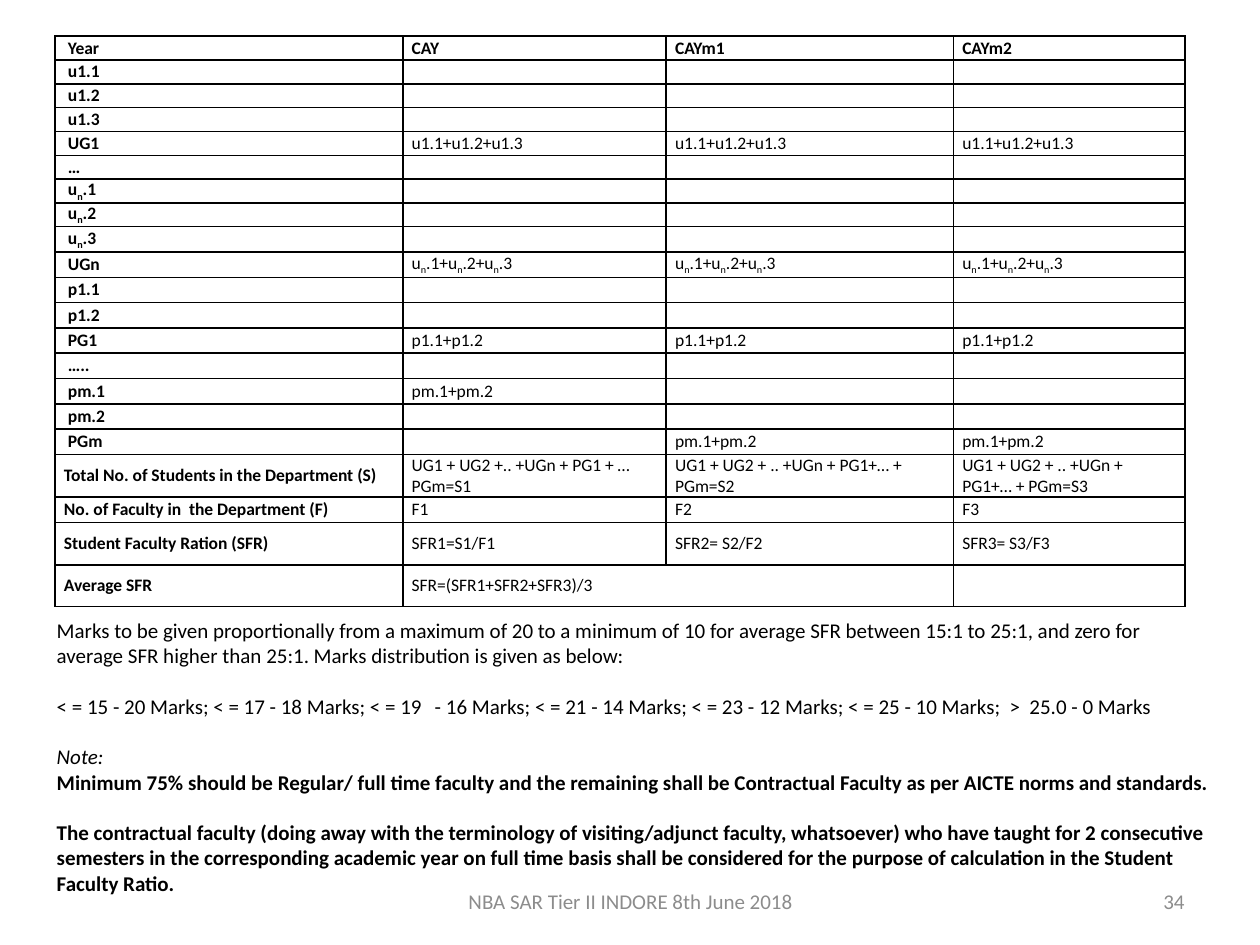
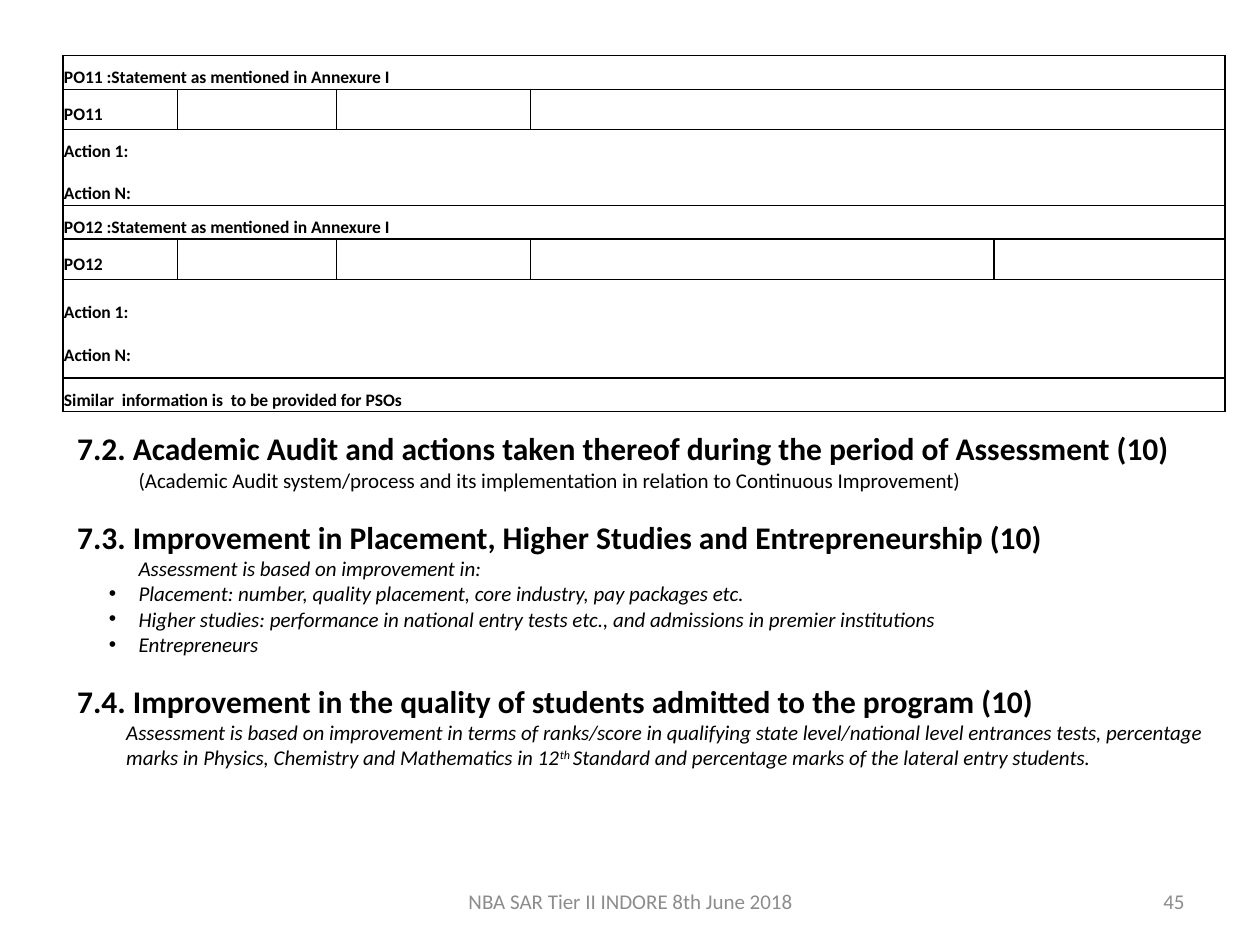
from dataclasses import dataclass

from lxml import etree
from pptx import Presentation
from pptx.dml.color import RGBColor
from pptx.enum.text import MSO_ANCHOR, MSO_AUTO_SIZE, PP_ALIGN
from pptx.oxml.ns import qn
from pptx.util import Cm, Pt

MIDDLE, TOP = MSO_ANCHOR.MIDDLE, MSO_ANCHOR.TOP
LEFT, CENTER, RIGHT = PP_ALIGN.LEFT, PP_ALIGN.CENTER, PP_ALIGN.RIGHT
NO_AUTOFIT = MSO_AUTO_SIZE.NONE

FONT = "Calibri"
BLACK, GREY = "000000", "8C8C8C"
TABLE_SIZE, BODY_SIZE, HEADING_SIZE = 10, 12, 18
SUBSCRIPT, SUPERSCRIPT = -25, 30
BLANK_LINE = 14.5
TITLE_AND_CONTENT = 1
FOOTER = "NBA SAR Tier II INDORE 8th June 2018"


@dataclass
class Box:
    left: float
    top: float
    width: float
    height: float


@dataclass
class Line:
    """One paragraph; text between two ~ marks is raised or lowered by shift percent."""
    text: str
    size: float = BODY_SIZE
    bold: bool = False
    italic: bool = False
    color: str = BLACK
    align: PP_ALIGN = LEFT
    indent: float = 0
    hanging: float = 0
    bullet: str = ""
    before: float = 0
    spacing: float = 1.0
    shift: int = SUBSCRIPT


@dataclass
class Grid:
    left: float
    top: float
    columns: list[float]
    rows: list[float]
    cells: list[list[list[Line]]]
    spans: list[tuple[int, int, int]]
    side_margin: float
    edge_margin: float


def rgb(color: str) -> RGBColor:
    return RGBColor.from_string(color)


def write_line(paragraph, line: Line) -> None:
    paragraph.alignment = line.align
    paragraph.line_spacing = line.spacing
    paragraph.space_before = Pt(line.before)
    properties = paragraph._p.get_or_add_pPr()
    properties.set("marL", str(Cm(line.indent)))
    properties.set("indent", str(-Cm(line.hanging)))
    if line.bullet:
        etree.SubElement(properties, qn("a:buChar"), char=line.bullet)
    else:
        etree.SubElement(properties, qn("a:buNone"))
    for index, text in enumerate(line.text.split("~")):
        run = paragraph.add_run()
        run.text = text
        font = run.font
        font.name, font.size = FONT, Pt(line.size)
        font.bold, font.italic = line.bold, line.italic
        font.color.rgb = rgb(line.color)
        if index % 2:
            run._r.get_or_add_rPr().set("baseline", str(line.shift * 1000))


def write_lines(text_frame, lines: list[Line]) -> None:
    for index, line in enumerate(lines):
        paragraph = text_frame.add_paragraph() if index else text_frame.paragraphs[0]
        write_line(paragraph, line)


def border_cell(cell) -> None:
    properties = cell._tc.get_or_add_tcPr()
    for side in ("a:lnL", "a:lnR", "a:lnT", "a:lnB"):
        border = etree.SubElement(properties, qn(side), w=str(Pt(1)))
        fill = etree.SubElement(border, qn("a:solidFill"))
        etree.SubElement(fill, qn("a:srgbClr"), val=BLACK)


def add_grid(slide, grid: Grid) -> None:
    frame = slide.shapes.add_table(
        len(grid.rows), len(grid.columns), Cm(grid.left), Cm(grid.top),
        Cm(sum(grid.columns)), Cm(sum(grid.rows)))
    table = frame.table
    table.first_row = table.horz_banding = False
    for column, width in zip(table.columns, grid.columns):
        column.width = Cm(width)
    for row, height in zip(table.rows, grid.rows):
        row.height = Cm(height)
    for cell in table.iter_cells():
        border_cell(cell)
        cell.fill.background()
        cell.vertical_anchor = MIDDLE
        cell.margin_left = cell.margin_right = Cm(grid.side_margin)
        cell.margin_top = cell.margin_bottom = Cm(grid.edge_margin)
    for row, first, last in grid.spans:
        table.cell(row, first).merge(table.cell(row, last))
    for row, contents in enumerate(grid.cells):
        for column in range(len(grid.columns)):
            text_frame = table.cell(row, column).text_frame
            if column < len(contents) and contents[column]:
                write_lines(text_frame, contents[column])
            else:
                etree.SubElement(text_frame.paragraphs[0]._p, qn("a:endParaRPr"),
                                 sz=str(TABLE_SIZE * 100))


def place(shape, box: Box) -> None:
    shape.left, shape.top = Cm(box.left), Cm(box.top)
    shape.width, shape.height = Cm(box.width), Cm(box.height)


def add_footer_text(slide, box: Box, text: str, align: PP_ALIGN) -> None:
    shape = slide.shapes.add_textbox(
        Cm(box.left), Cm(box.top), Cm(box.width), Cm(box.height))
    shape.text_frame.word_wrap = True
    shape.text_frame.vertical_anchor = MIDDLE
    write_lines(shape.text_frame, [Line(text, color=GREY, align=align)])


def add_slide(presentation, grid: Grid, body_box: Box, body: list[Line], number: int) -> None:
    slide = presentation.slides.add_slide(presentation.slide_layouts[TITLE_AND_CONTENT])
    title = slide.shapes.title
    title._element.getparent().remove(title._element)
    add_grid(slide, grid)
    placeholder = slide.placeholders[1]
    place(placeholder, body_box)
    text_frame = placeholder.text_frame
    text_frame.word_wrap = True
    text_frame.auto_size = NO_AUTOFIT
    text_frame.vertical_anchor = TOP
    write_lines(text_frame, body)
    add_footer_text(slide, Box(8.69, 17.65, 8.05, 1.02), FOOTER, CENTER)
    add_footer_text(slide, Box(18.21, 17.65, 5.92, 1.02), str(number), RIGHT)


def faculty_ratio_grid() -> Grid:
    texts = [
        ["Year", "CAY", "CAYm1", "CAYm2"],
        ["u1.1"],
        ["u1.2"],
        ["u1.3"],
        ["UG1"] + ["u1.1+u1.2+u1.3"] * 3,
        ["…"],
        ["u~n~.1"],
        ["u~n~.2"],
        ["u~n~.3"],
        ["UGn"] + ["u~n~.1+u~n~.2+u~n~.3"] * 3,
        ["p1.1"],
        ["p1.2"],
        ["PG1"] + ["p1.1+p1.2"] * 3,
        ["….."],
        ["pm.1", "pm.1+pm.2"],
        ["pm.2"],
        ["PGm", "", "pm.1+pm.2", "pm.1+pm.2"],
        ["Total No. of Students in the Department (S)",
         "UG1 + UG2 +.. +UGn + PG1 + …PGm=S1",
         "UG1 + UG2 + .. +UGn + PG1+… + PGm=S2",
         "UG1 + UG2 + .. +UGn + PG1+… + PGm=S3"],
        ["No. of Faculty in  the Department (F)", "F1", "F2", "F3"],
        ["Student Faculty Ration (SFR)", "SFR1=S1/F1", "SFR2= S2/F2", "SFR3= S3/F3"],
        ["Average SFR", "SFR=(SFR1+SFR2+SFR3)/3"],
    ]
    first_summary_row, last_row = 17, 20
    cells = [
        [[Line(text, TABLE_SIZE, bold=row == 0 or column == 0,
               indent=0.08 if column == 0 and row < first_summary_row else 0)]
         if text else []
         for column, text in enumerate(row_texts)]
        for row, row_texts in enumerate(texts)]
    return Grid(1.11, 0.73, [7.01, 5.31, 5.79, 4.67],
                [0.48] * 8 + [0.51] * 9 + [0.86, 0.51, 0.86, 0.84],
                cells, [(last_row, 1, 2)], 0.18, 0)


def outcome_grid() -> Grid:
    def cell(*texts: str) -> list[Line]:
        return [Line(text, TABLE_SIZE, bold=True, before=6, spacing=1.5) for text in texts]

    cells = []
    for outcome in ("PO11", "PO12"):
        cells += [[cell(f"{outcome} :Statement as mentioned in Annexure I")],
                  [cell(outcome)],
                  [cell("Action 1:", "Action N:")]]
    cells.append([cell("Similar  information is  to be provided for PSOs")])
    full_rows = [(row, 0, 4) for row in (0, 2, 3, 5, 6)]
    return Grid(1.27, 1.12, [2.31, 3.2, 3.91, 9.35, 4.65],
                [0.68, 0.81, 1.53, 0.68, 0.81, 1.99, 0.68],
                cells, full_rows + [(1, 3, 4)], 0.02, 0.01)


def heading(text: str, before: float = BLANK_LINE) -> Line:
    return Line(text, HEADING_SIZE, bold=True, before=before)


def bullet(text: str) -> Line:
    return Line(text, italic=True, indent=1.24, hanging=0.6, bullet="•")


MARKS_TEXT = [
    Line("Marks to be given proportionally from a maximum of 20 to a minimum of 10 for "
         "average SFR between 15:1 to 25:1, and zero for average SFR higher than 25:1. "
         "Marks distribution is given as below:"),
    Line("< = 15 - 20 Marks; < = 17 - 18 Marks; < = 19\t- 16 Marks; < = 21 - 14 Marks; "
         "< = 23 - 12 Marks; < = 25 - 10 Marks;  >  25.0 - 0 Marks", before=BLANK_LINE),
    Line("Note:", italic=True, before=BLANK_LINE),
    Line("Minimum 75% should be Regular/ full time faculty and the remaining shall be "
         "Contractual Faculty as per AICTE norms and standards.", bold=True),
    Line("The contractual faculty (doing away with the terminology of visiting/adjunct "
         "faculty, whatsoever) who have taught for 2 consecutive semesters in the "
         "corresponding academic year on full time basis shall be considered for the "
         "purpose of calculation in the Student Faculty Ratio.",
         bold=True, before=BLANK_LINE),
]

IMPROVEMENT_TEXT = [
    heading("7.2. Academic Audit and actions taken thereof during the period of "
            "Assessment (10)", before=0),
    Line("(Academic Audit system/process and its implementation in relation to "
         "Continuous Improvement)", indent=1.24),
    heading("7.3. Improvement in Placement, Higher Studies and Entrepreneurship (10)"),
    Line("Assessment is based on improvement in:", italic=True, indent=1.24),
    bullet("Placement: number, quality placement, core industry, pay packages etc."),
    bullet("Higher studies: performance in national entry tests etc., and admissions in "
           "premier institutions"),
    bullet("Entrepreneurs"),
    heading("7.4. Improvement in the quality of students admitted to the program (10)"),
    Line("Assessment is based on improvement in terms of ranks/score in qualifying state "
         "level/national level entrances tests, percentage marks in Physics, Chemistry and "
         "Mathematics in 12~th ~Standard and percentage marks of the lateral entry students.",
         italic=True, indent=0.99, shift=SUPERSCRIPT),
]


def main() -> None:
    presentation = Presentation()
    presentation.slide_width, presentation.slide_height = Cm(25.4), Cm(19.05)
    add_slide(presentation, faculty_ratio_grid(), Box(0.89, 12.32, 23.8, 6.4),
              MARKS_TEXT, 34)
    add_slide(presentation, outcome_grid(), Box(1.3, 8.53, 23.39, 7.19),
              IMPROVEMENT_TEXT, 45)
    presentation.save("out.pptx")


if __name__ == "__main__":
    main()
